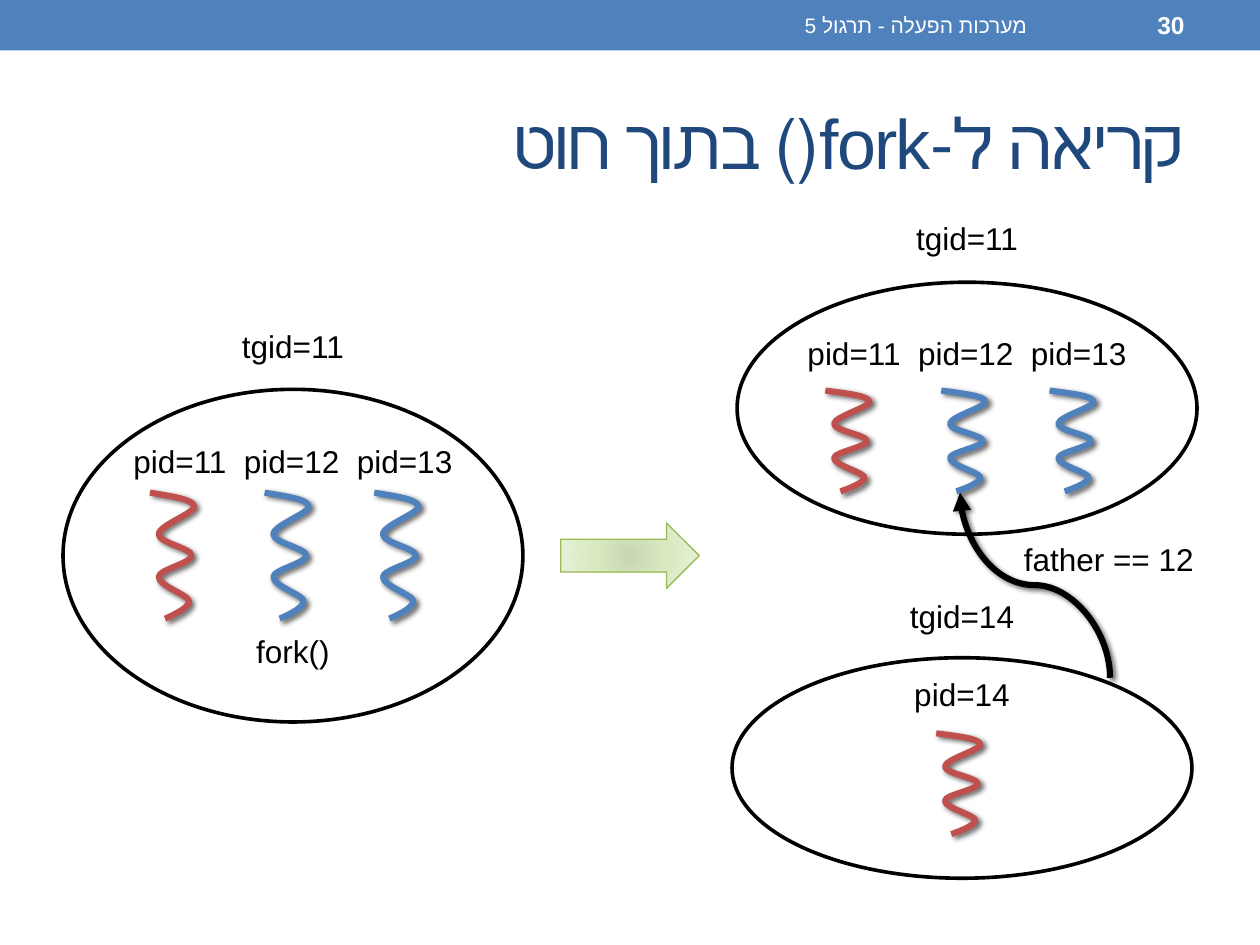
from lxml import etree
from pptx import Presentation
from pptx.dml.color import RGBColor
from pptx.enum.shapes import MSO_CONNECTOR, MSO_SHAPE
from pptx.enum.text import MSO_ANCHOR, PP_ALIGN
from pptx.oxml import parse_xml
from pptx.oxml.ns import nsdecls, qn
from pptx.util import Pt

PX = 9144
FONT = "Arial"
WHITE = RGBColor(0xFF, 0xFF, 0xFF)
BLACK = RGBColor(0x00, 0x00, 0x00)
NAVY = RGBColor(0x1F, 0x49, 0x7D)
BLUE = RGBColor(0x4F, 0x81, 0xBD)
RED = RGBColor(0xC0, 0x50, 0x4D)
GREEN = RGBColor(0x9B, 0xBB, 0x59)
GRADIENT = ((0, RGBColor(0xC8, 0xD7, 0xB2)),
            (45, RGBColor(0xD8, 0xE8, 0xC0)),
            (100, RGBColor(0xE9, 0xF3, 0xDC)))

RECTANGLE = MSO_SHAPE.RECTANGLE
OVAL = MSO_SHAPE.OVAL
RIGHT_ARROW = MSO_SHAPE.RIGHT_ARROW
CURVE = MSO_CONNECTOR.CURVE
TOP = MSO_ANCHOR.TOP
MIDDLE = MSO_ANCHOR.MIDDLE
BOTTOM = MSO_ANCHOR.BOTTOM
CENTER = PP_ALIGN.CENTER
RIGHT = PP_ALIGN.RIGHT

THREE_PIDS = "pid=11  pid=12  pid=13"
WAVE = (
    ((17, 3), (34, 5), (35, 11)),
    ((36, 16), (7, 26), (7, 33)),
    ((7, 40), (33, 44), (33, 50)),
    ((33, 56), (7, 61), (7, 67)),
    ((7, 74), (30, 81), (31, 86)),
    ((32, 92), (12, 100), (12, 100)),
)


def emu(*lengths):
    return [round(length * PX) for length in lengths]


def write(para, text, size=18, color=BLACK, bold=False, align=CENTER,
          rtl=False, spacing=None, before=0, complex_font=FONT):
    para.alignment = align
    if before:
        para.space_before = Pt(before)
    if rtl:
        para._p.get_or_add_pPr().set("rtl", "1")
    span = para.add_run()
    span.text = text
    span.font.name = FONT
    span.font.size = Pt(size)
    span.font.bold = bold
    span.font.color.rgb = color
    properties = span._r.get_or_add_rPr()
    if complex_font:
        etree.SubElement(properties, qn("a:cs"), typeface=complex_font)
    if spacing is not None:
        properties.set("spc", str(spacing))


def add_text(page, box, text, anchor=MIDDLE, **style):
    frame = page.shapes.add_textbox(*emu(*box)).text_frame
    frame.word_wrap = True
    frame.vertical_anchor = anchor
    write(frame.paragraphs[0], text, **style)


def add_solid(page, kind, box, fill, line=None, width=0):
    shape = page.shapes.add_shape(kind, *emu(*box))
    shape.shadow.inherit = False
    shape.fill.solid()
    shape.fill.fore_color.rgb = fill
    if line is None:
        shape.line.fill.background()
    else:
        shape.line.color.rgb = line
        shape.line.width = Pt(width)
    return shape


def add_shadow(shape):
    properties = shape._element.spPr
    properties.append(parse_xml(
        f'<a:effectLst {nsdecls("a")}>'
        '<a:outerShdw blurRad="38100" dist="25400" dir="2700000" rotWithShape="0">'
        f'<a:srgbClr val="{BLACK}"><a:alpha val="60000"/></a:srgbClr>'
        '</a:outerShdw></a:effectLst>'))


def add_thread(page, left, top, height, color):
    def place(point):
        return emu(point[0], point[1] * height / 100)

    start_x, start_y = emu(left, top)
    ends = [place(curve[-1]) for curve in WAVE]
    builder = page.shapes.build_freeform(start_x, start_y)
    builder.add_line_segments([(start_x + x, start_y + y) for x, y in ends], close=False)
    thread = builder.convert_to_shape()
    segments = list(thread._element.spPr.iter(qn("a:lnTo")))
    for segment, curve in zip(segments, WAVE):
        bend = etree.Element(qn("a:cubicBezTo"))
        for x, y in map(place, curve):
            etree.SubElement(bend, qn("a:pt"), x=str(x), y=str(y))
        segment.getparent().replace(segment, bend)
    thread.fill.background()
    thread.line.color.rgb = color
    thread.line.width = Pt(3.5)
    add_shadow(thread)


def add_process(page, box, labels, text_rise, threads, thread_y, thread_height):
    left, top, _, _ = box
    frame = add_solid(page, OVAL, box, WHITE, BLACK, 2.08).text_frame
    frame.word_wrap = False
    frame.vertical_anchor = BOTTOM
    frame.margin_top = 0
    frame.margin_bottom = emu(text_rise)[0]
    for index, (label, before) in enumerate(labels):
        para = frame.add_paragraph() if index else frame.paragraphs[0]
        write(para, label, before=before)
    for offset, color in threads:
        add_thread(page, left + offset, top + thread_y, thread_height, color)


def add_header(page, box):
    left, top, width, height = box
    add_solid(page, RECTANGLE, box, BLUE)
    add_text(page, (left + 375, top + 2, 450, height - 4), "מערכות הפעלה - תרגול 5",
             size=12, color=WHITE, align=RIGHT, rtl=True)
    add_text(page, (left + 833, top + 2, 117, height - 4), "30",
             size=14, color=WHITE, bold=True, align=RIGHT, rtl=True)


def add_title(page, box):
    title = page.shapes.title
    title.left, title.top, title.width, title.height = emu(*box)
    title.text_frame.vertical_anchor = MIDDLE
    write(title.text_frame.paragraphs[0], "קריאה ל-fork() בתוך חוט", size=40, color=NAVY,
          align=RIGHT, rtl=True, spacing=-100, complex_font=None)


def add_step_arrow(page, box):
    arrow = add_solid(page, RIGHT_ARROW, box, GRADIENT[0][1], GREEN, 0.75)
    stops = "".join(f'<a:gs pos="{place * 1000}"><a:srgbClr val="{color}"/></a:gs>'
                    for place, color in GRADIENT)
    properties = arrow._element.spPr
    properties.replace(properties.find(qn("a:solidFill")), parse_xml(
        f'<a:gradFill {nsdecls("a")}><a:gsLst>{stops}</a:gsLst><a:path path="circle">'
        '<a:fillToRect l="100000" t="100000" r="100000" b="100000"/></a:path></a:gradFill>'))


def add_parent_link(page, box):
    left, top, width, height = box
    middle_x, middle_y = left + width / 2, top + height / 2
    link = page.shapes.add_connector(CURVE, *emu(
        middle_x - height / 2, middle_y + width / 2,
        middle_x + height / 2, middle_y - width / 2))
    link._element.spPr.find(qn("a:xfrm")).set("rot", "16200000")
    link.line.color.rgb = BLACK
    link.line.width = Pt(3.5)
    etree.SubElement(link.line._get_or_add_ln(), qn("a:tailEnd"), type="triangle")
    add_shadow(link)
    add_text(page, (left + 38, top + 33, 160, 40), "father == 12", anchor=TOP)


def main():
    deck = Presentation()
    deck.slide_width, deck.slide_height = emu(1000, 750)
    page = deck.slides.add_slide(deck.slide_layouts[5])
    add_header(page, (0, 0, 1000, 40))
    add_title(page, (50, 58, 900, 108))
    parent = [("tgid=11", 0), (THREE_PIDS, 44)]
    add_process(page, (50, 309, 365, 264), parent + [("fork()", 87)], 3,
                ((69, RED), (160, BLUE), (247, BLUE)), 82, 100)
    add_step_arrow(page, (445, 415, 110, 52))
    add_process(page, (585, 224, 365, 200), parent, 100,
                ((70, RED), (162, BLUE), (248, BLUE)), 86, 80)
    add_process(page, (581, 522, 365, 175), [("tgid=14", 0), ("pid=14", 23)], 106,
                ((162, RED),), 60, 80)
    add_parent_link(page, (762, 391, 119, 147))
    deck.save("out.pptx")


if __name__ == "__main__":
    main()
